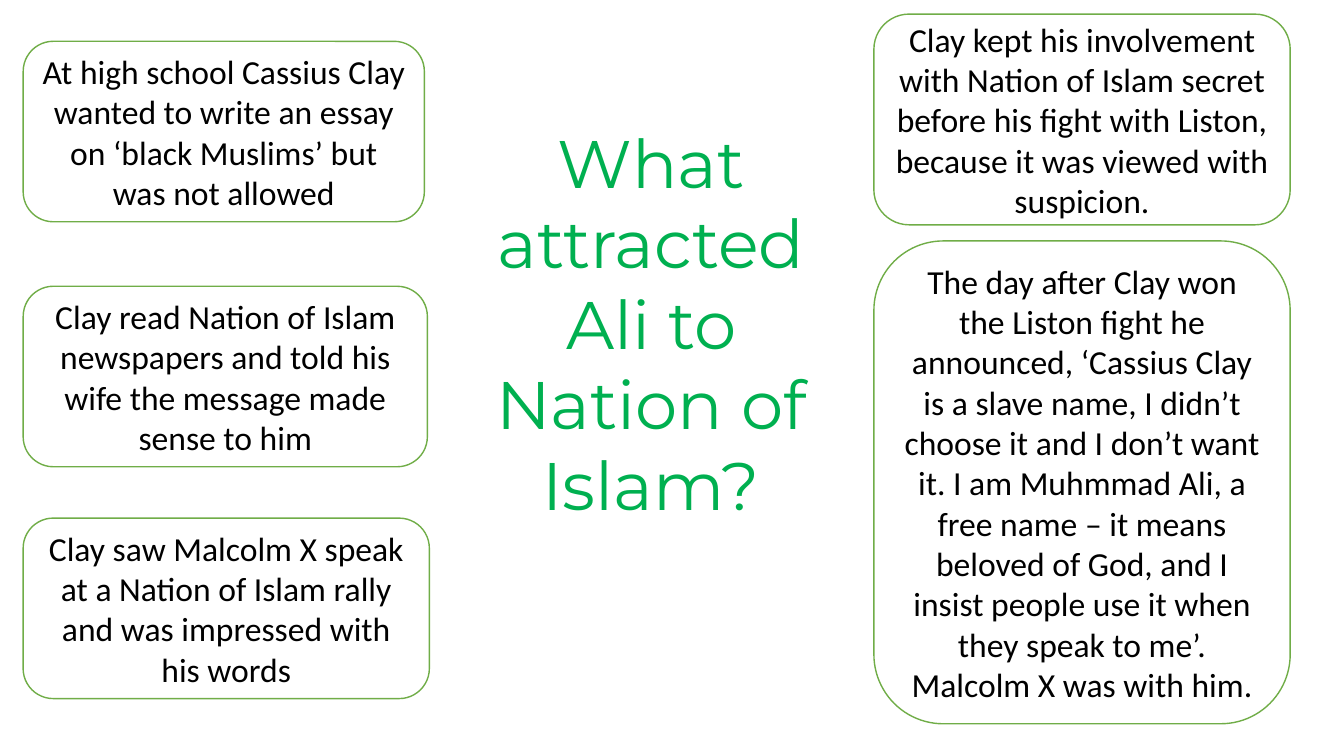
from pptx import Presentation
from pptx.dml import color
from pptx.enum import shapes, text
from pptx.util import Pt

LEFT_EDGE, RIGHT_EDGE = 16.56, 624.24

REASONS = [
    (LEFT_EDGE, 29.52, 286.56, 128.88,
     "At high school Cassius Clay wanted to write an essay on ‘black Muslims’ but was not allowed"),
    (LEFT_EDGE, 204.48, 288.72, 128.88,
     "Clay read Nation of Islam newspapers and told his wife the message made sense to him"),
    (LEFT_EDGE, 370.08, 290.16, 128.88,
     "Clay saw Malcolm X speak at a Nation of Islam rally and was impressed with his words"),
    (RIGHT_EDGE, 10.08, 297.36, 150.48,
     "Clay kept his involvement with Nation of Islam secret before his fight with Liston, "
     "because it was viewed with suspicion."),
    (RIGHT_EDGE, 172.08, 297.36, 344.88,
     "The day after Clay won the Liston fight he announced, ‘Cassius Clay is a slave name, "
     "I didn’t choose it and I don’t want it. I am Muhmmad Ali, a free name – it means beloved "
     "of God, and I insist people use it when they speak to me’. Malcolm X was with him."),
]


def rgb(hex_colour):
    return color.RGBColor.from_string(hex_colour)


def apply_format(target, values):
    for name, value in values.items():
        setattr(target, name, value)


def write(frame, words, font_name, size, hex_colour, anchor):
    apply_format(frame, {"word_wrap": True, "vertical_anchor": anchor})
    paragraph = frame.paragraphs[0]
    paragraph.alignment = text.PP_ALIGN.CENTER
    run = paragraph.add_run()
    run.text = words
    apply_format(run.font, {"name": font_name, "size": Pt(size)})
    run.font.color.rgb = rgb(hex_colour)


def add_reason(slide, left, top, width, height, words):
    reason = slide.shapes.add_shape(
        shapes.MSO_SHAPE.ROUNDED_RECTANGLE, Pt(left), Pt(top), Pt(width), Pt(height))
    reason.shadow.inherit = False
    reason.fill.solid()
    reason.fill.fore_color.rgb = rgb("FFFFFF")
    reason.line.color.rgb = rgb("70AD47")
    reason.line.width = Pt(1)
    write(reason.text_frame, words, "Calibri", 24, "000000", text.MSO_ANCHOR.MIDDLE)


def add_question(slide, left, top, width, height, words):
    question = slide.shapes.add_textbox(Pt(left), Pt(top), Pt(width), Pt(height))
    question.text_frame.auto_size = text.MSO_AUTO_SIZE.SHAPE_TO_FIT_TEXT
    write(question.text_frame, words, "Montserrat", 48, "00B050", text.MSO_ANCHOR.TOP)


def main():
    deck = Presentation()
    apply_format(deck, {"slide_width": Pt(960), "slide_height": Pt(540)})
    slide = deck.slides.add_slide(deck.slide_layouts[6])
    add_question(slide, 322.56, 82.8, 285.12, 298.08, "What attracted Ali to Nation of Islam?")
    for reason in REASONS:
        add_reason(slide, *reason)
    deck.save("out.pptx")


if __name__ == "__main__":
    main()
